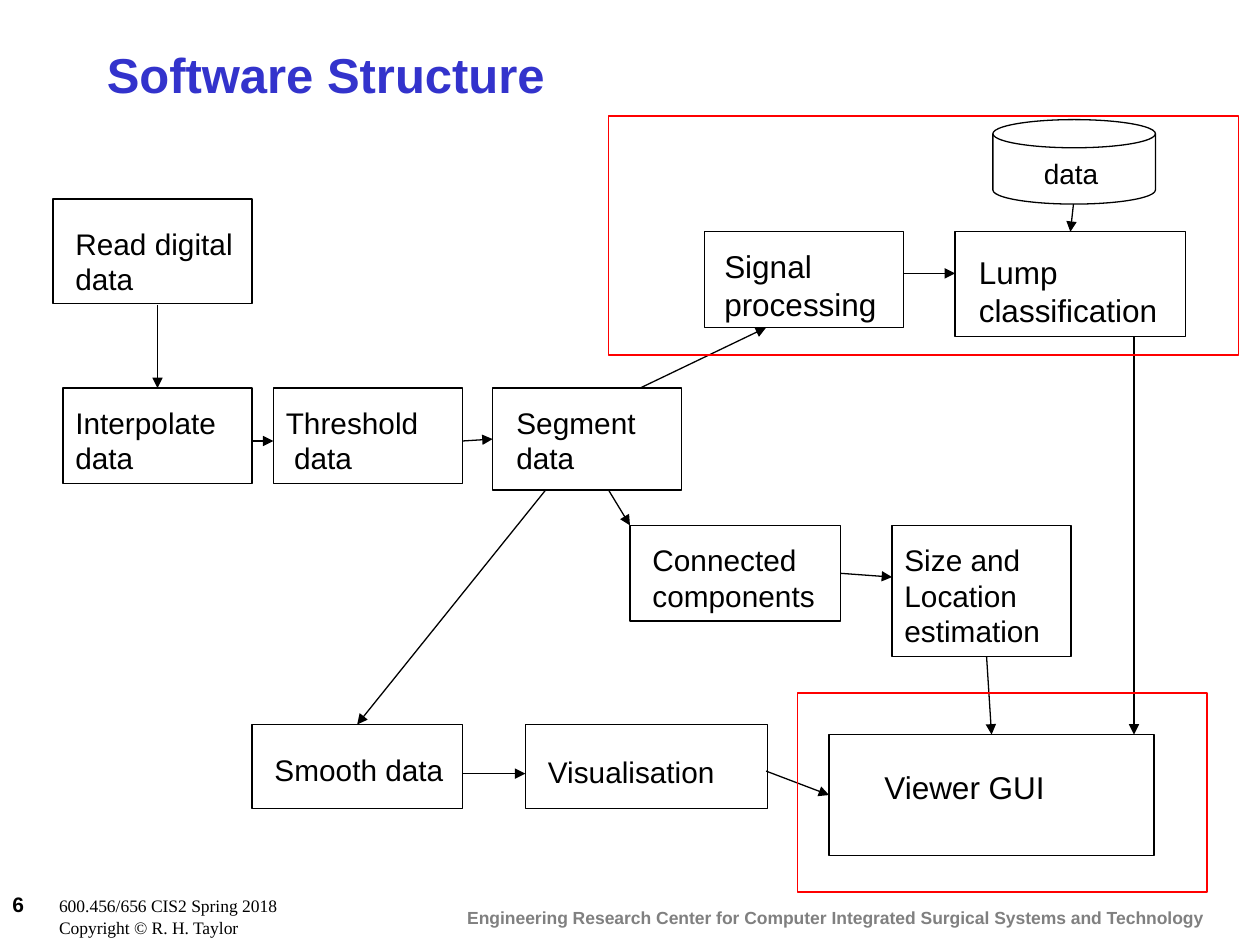
"""Builds the Software Structure flow diagram slide."""
from lxml.etree import SubElement
from pptx import Presentation
from pptx.dml.color import RGBColor
from pptx.enum.shapes import MSO_CONNECTOR, MSO_SHAPE
from pptx.enum.text import MSO_ANCHOR, PP_ALIGN
from pptx.oxml.ns import qn
from pptx.util import Inches, Pt

BLACK = RGBColor(0x00, 0x00, 0x00)
WHITE = RGBColor(0xFF, 0xFF, 0xFF)
RED = RGBColor(0xFF, 0x00, 0x00)
BLUE = RGBColor(0x33, 0x33, 0xCC)
GRAY = RGBColor(0x80, 0x80, 0x80)
TOP, LEFT, BOTTOM, RIGHT = range(4)

STEPS = {
    "interpolate": ((0.5, 3.08, 1.5, 0.76), (0.5, 3.16, 1.5, 0.67), "Interpolate\ndata", 17),
    "threshold": ((2.17, 3.08, 1.5, 0.76), (2.17, 3.16, 1.83, 0.67), "Threshold\n data", 17),
    "smooth": ((2, 5.75, 1.67, 0.67), (2.08, 5.92, 2.08, 0.39), "Smooth data", 17),
    "read": ((0.42, 1.58, 1.58, 0.83), (0.5, 1.74, 1.5, 0.67), "Read digital data", 17),
    "visualise": ((4.17, 5.75, 1.92, 0.67), (4.25, 5.93, 1.83, 0.39), "Visualisation", 17),
    "connected": ((5, 4.17, 1.67, 0.76), (5.08, 4.25, 1.5, 0.67), "Connected components", 17),
    "size": ((7.08, 4.17, 1.42, 1.04), (7.08, 4.25, 1.67, 0.96), "Size and Location estimation", 17),
    "segment": ((3.91, 3.08, 1.5, 0.81), (4, 3.16, 1.25, 0.67), "Segment data", 17),
    "gui": ((6.58, 5.83, 2.58, 0.96), (6.92, 6.05, 2.08, 0.4), "Viewer GUI", 18),
    "signal": ((5.59, 1.84, 1.58, 0.76), (5.65, 1.91, 1.43, 0.71), "Signal processing", 18),
    "lump": ((7.58, 1.84, 1.83, 0.83), (7.67, 1.96, 1.67, 0.71), "Lump classification", 18),
}
FLOWS = [
    ((1.25, 2.42), (1.25, 3.08), None, ("interpolate", TOP)),
    ((2, 3.5), (2.17, 3.5), None, None),
    ((3.67, 3.5), (3.91, 3.48), None, ("segment", LEFT)),
    ((5.08, 3.08), (6.08, 2.6), None, None),
    ((4.83, 3.89), (5, 4.17), None, None),
    ((3.67, 6.14), (4.17, 6.14), None, None),
    ((6.67, 4.54), (7.08, 4.58), ("connected", RIGHT), None),
    ((7.83, 5.21), (7.88, 5.83), None, ("gui", TOP)),
    ((9, 2.67), (9, 5.83), None, None),
    ((4.33, 3.89), (2.83, 5.75), None, ("smooth", TOP)),
    ((6.08, 6.12), (6.58, 6.31), None, ("gui", LEFT)),
    ((7.17, 2.17), (7.58, 2.17), None, None),
    ((8.52, 1.62), (8.5, 1.84), None, ("lump", TOP)),
]
FRAMES = [(4.83, 0.92, 5, 1.9), (6.33, 5.5, 3.25, 1.58)]


class Diagram:
    """Holds the text style and the slide being drawn."""

    def __init__(self, slide):
        self.slide = slide
        self.style = {"name": "Arial", "size": 17, "bold": False, "color": BLACK}

    def format(self, font, **changes):
        values = {**self.style, **changes}
        font.color.rgb = values.pop("color")
        values["size"] = Pt(values["size"])
        for attribute, value in values.items():
            setattr(font, attribute, value)

    def text(self, place, wording, wrap=True, anchor=MSO_ANCHOR.TOP, align=PP_ALIGN.LEFT, **changes):
        frame = self.slide.shapes.add_textbox(*map(Inches, place)).text_frame
        frame.word_wrap = wrap
        frame.vertical_anchor = anchor
        frame.text = wording
        for paragraph in frame.paragraphs:
            paragraph.alignment = align
            for run in paragraph.runs:
                self.format(run.font, **changes)
        return frame

    def shape(self, place, kind=MSO_SHAPE.RECTANGLE, fill=WHITE, line=BLACK, width=0.75):
        outline = self.slide.shapes.add_shape(kind, *map(Inches, place))
        outline.shadow.inherit = False
        if fill is None:
            outline.fill.background()
        else:
            outline.fill.solid()
            outline.fill.fore_color.rgb = fill
        outline.line.color.rgb = line
        outline.line.width = Pt(width)
        return outline

    def arrow(self, start, end, source=None, target=None):
        flow = self.slide.shapes.add_connector(MSO_CONNECTOR.STRAIGHT, *map(Inches, start + end))
        flow.line.color.rgb = BLACK
        flow.line.width = Pt(0.75)
        SubElement(flow.line._get_or_add_ln(), qn("a:tailEnd"), type="triangle")
        SubElement(flow._element.spPr, qn("a:effectLst"))
        if source:
            flow.begin_connect(*source)
        if target:
            flow.end_connect(*target)

    def footer(self, place, number, course, rights):
        frame = self.text(place, f"{number}\n{rights}", name="Times New Roman", size=10)
        numbered, copyright_line = frame.paragraphs
        for paragraph, indent in ((numbered, -0.37), (copyright_line, 0)):
            properties = paragraph._p.get_or_add_pPr()
            properties.set("marL", str(Inches(0.37)))
            properties.set("indent", str(Inches(indent)))
        numbered.runs[0].text = f"{number}\t"
        self.format(numbered.runs[0].font, size=12, bold=True)
        course_run = numbered.add_run()
        course_run.text = course
        self.format(course_run.font, name="Times New Roman", size=10)


def main():
    presentation = Presentation()
    presentation.slide_width, presentation.slide_height = Inches(10), Inches(7.5)
    diagram = Diagram(presentation.slides.add_slide(presentation.slide_layouts[6]))

    diagram.text((3.61, 7.15, 6.06, 0.27),
                 "Engineering Research Center for Computer Integrated Surgical Systems and Technology",
                 wrap=False, size=10, bold=True, color=GRAY)
    diagram.footer((0, 7.03, 4.08, 0.47), 6, "600.456/656 CIS2 Spring 2018",
                   "Copyright © R. H. Taylor")
    diagram.text((0.75, 0.25, 8.5, 0.67), "Software Structure", anchor=MSO_ANCHOR.MIDDLE,
                 size=28, bold=True, color=BLUE)

    boxes = {}
    for step, (place, label_place, label, size) in STEPS.items():
        boxes[step] = diagram.shape(place)
        diagram.text(label_place, label, size=size)
    diagram.shape((7.88, 0.95, 1.29, 0.67), MSO_SHAPE.FLOWCHART_MAGNETIC_DISK)
    diagram.text((8, 1.19, 1, 0.37), "data", align=PP_ALIGN.CENTER, size=16)

    for start, end, *joins in FLOWS:
        diagram.arrow(start, end, *(join and (boxes[join[0]], join[1]) for join in joins))
    for place in FRAMES:
        diagram.shape(place, fill=None, line=RED, width=1)

    presentation.save("out.pptx")


if __name__ == "__main__":
    main()
